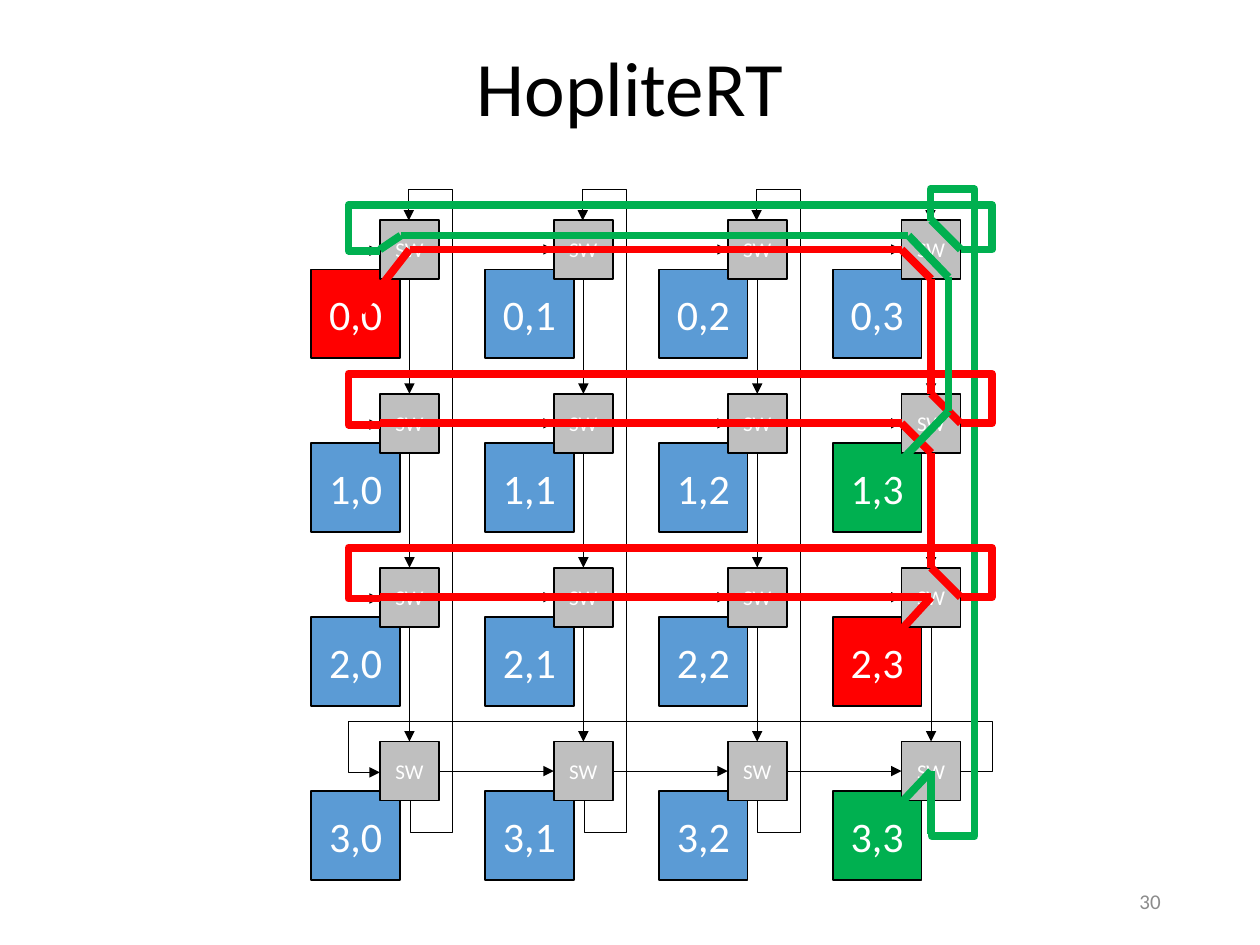
import itertools
import pptx
import pptx.util
import pptx.dml.color
import pptx.enum.shapes
import pptx.enum.text
import pptx.oxml
import pptx.oxml.ns
from lxml import etree

Inches = pptx.util.Inches
rgb = pptx.dml.color.RGBColor.from_string
qn = pptx.oxml.ns.qn
ALIGN = pptx.enum.text.PP_ALIGN
LINES = pptx.enum.shapes.MSO_CONNECTOR
BLACK, RED, GREEN, BLUE, GREY = "000000", "FF0000", "00B050", "5B9BD5", "BFBFBF"

# Grid: one unit is the pitch, point (0, 0) is the centre of the first switch
PITCH, LEFT, TOP, N = 1.38, 3.25, 1.98, 4
SWITCH, TILE = 0.34, 0.51
EDGE, LAST = SWITCH / 2, N - 1
LEAD = 0.18
THIN, THICK = 0.5, 4.5

deck = pptx.Presentation()
deck.slide_width, deck.slide_height = Inches(10), Inches(7.5)
slide = deck.slides.add_slide(deck.slide_layouts[6])


def write(text, left, top, width, height, size, colour="FFFFFF", fill=None,
          align=ALIGN.CENTER, spacing=1.0):
    """Place text, in a filled square if a fill is given; lengths in inches."""
    area = [Inches(v) for v in (left, top, width, height)]
    if fill:
        holder = slide.shapes.add_shape(pptx.enum.shapes.MSO_SHAPE.RECTANGLE, *area)
        holder.shadow.inherit = False
        holder.fill.solid()
        holder.fill.fore_color.rgb = rgb(fill)
        holder.line.color.rgb = rgb(BLACK)
        holder.line.width = pptx.util.Pt(1)
    else:
        holder = slide.shapes.add_textbox(*area)
    frame = holder.text_frame
    frame.word_wrap = True
    frame.vertical_anchor = pptx.enum.text.MSO_ANCHOR.MIDDLE
    line = frame.paragraphs[0]
    line.alignment, line.line_spacing = align, spacing
    run = line.add_run()
    run.text = text
    run.font.name, run.font.size = "Calibri", pptx.util.Pt(size)
    run.font.color.rgb = rgb(colour)
    return holder


def wire(begin, end, colour, weight, arrow=False, loop=None):
    """Join two grid points; loop = (lead out, lead in, detour) wraps around."""
    (x1, y1), (x2, y2) = [(LEFT + PITCH * x, TOP + PITCH * y) for x, y in (begin, end)]
    vertical = abs(y2 - y1) > abs(x2 - x1)
    if loop:
        length, drop = max(abs(x2 - x1), abs(y2 - y1)), 0.01
        middle, y1 = (x1 + x2) / 2, (y1 + y2) / 2
        x1, x2, y2 = middle + length / 2, middle - length / 2, y1 + drop
    link = slide.shapes.add_connector(LINES.ELBOW if loop else LINES.STRAIGHT,
                                      *[Inches(v) for v in (x1, y1, x2, y2)])
    link.line.color.rgb = rgb(colour)
    link.line.width = pptx.util.Pt(weight)
    outline = link.line._get_or_add_ln()
    if arrow:
        etree.SubElement(outline, qn("a:tailEnd"), type="triangle")
    properties = link._element.spPr
    etree.SubElement(properties, qn("a:effectLst"))
    if loop:
        if vertical:
            properties.find(qn("a:xfrm")).set("rot", "5400000")
        geometry = properties.find(qn("a:prstGeom"))
        geometry.set("prst", "bentConnector5")
        guides = geometry.find(qn("a:avLst"))
        lead_out, lead_in, detour = [PITCH * v for v in loop]
        shares = (-lead_out / length, -detour / drop, 1 + lead_in / length)
        for i, share in enumerate(shares, 1):
            etree.SubElement(guides, qn("a:gd"), name=f"adj{i}",
                             fmla=f"val {round(share * 100000)}")
    return link


# Title
write("HopliteRT", 0, 0, 10, 1.45, 44, BLACK, spacing=0.9)

# Tiles, then the switches above them
endpoints = {(0, 0): RED, (2, 3): RED, (1, 3): GREEN, (3, 3): GREEN}
cells = list(itertools.product(range(N), repeat=2))
for row, col in cells:
    write(f"{row},{col}", LEFT + PITCH * (col - 0.31 - TILE / 2),
          TOP + PITCH * (row + 0.37 - TILE / 2), PITCH * TILE, PITCH * TILE, 24,
          fill=endpoints.get((row, col), BLUE))
switches = {}
for row, col in cells:
    switches[row, col] = write("SW", LEFT + PITCH * (col - EDGE), TOP + PITCH * (row - EDGE),
                               PITCH * SWITCH, PITCH * SWITCH, 12, fill=GREY)

# Links to the next switch on the right and below
for row, col in cells:
    for (down, right), out_side, in_side in (((0, 1), 3, 1), ((1, 0), 2, 0)):
        neighbour = switches.get((row + down, col + right))
        if neighbour:
            link = wire((col, row), (col + right, row + down), BLACK, THIN, arrow=True)
            link.begin_connect(switches[row, col], out_side)
            link.end_connect(neighbour, in_side)

# Wrap-around links of each row and column
row_detours = [0.26, 0.29, 0.29, 0.29]
for i, detour in enumerate(row_detours):
    wire((LAST + EDGE, i), (-EDGE, i), BLACK, THIN, True, (LEAD, LEAD, detour))
    wire((i, LAST + EDGE), (i, -EDGE), BLACK, THIN, True, (LEAD, LEAD, 0.25))

# Packet routes: runs of grid points, each followed by a wrap-around or by None
row_wraps = [(LEAD, LEAD, detour) for detour in row_detours]
green_climb = [
    ([(2.67, 3.35), (3, 3), (3, 3.36)], (0.01, LEAD, 0.25)),
    ([(3, -EDGE), (3 + EDGE, 0)], row_wraps[0]),
    ([(-EDGE, 0)], None),
]
red_route = [
    ([(-0.28, 0.36), (0, 0), (3 - EDGE, 0), (3, EDGE), (3, 1 - EDGE), (3 + EDGE, 1)],
     row_wraps[1]),
    ([(-EDGE, 1), (3 - EDGE, 1), (3, 1 + EDGE), (3, 2 - EDGE), (3 + EDGE, 2)], row_wraps[2]),
    ([(-EDGE, 2), (3 - EDGE, 2), (3, 2), (2.67, 2.36)], None),
]
green_delivery = [
    ([(-EDGE, 0), (-0.05, -0.08), (2.87, -0.08), (3.1, 0.16), (3.1, 0.93), (2.67, 1.38)], None),
]
for colour, route in ((GREEN, green_climb), (RED, red_route), (GREEN, green_delivery)):
    for i, (points, wrap) in enumerate(route):
        for begin, end in itertools.pairwise(points):
            wire(begin, end, colour, THICK)
        if wrap:
            wire(points[-1], route[i + 1][0][0], colour, THICK, loop=wrap)

# Page number
write("30", 7.06, 6.95, 2.25, 0.4, 12, "8C8C8C", align=ALIGN.RIGHT)

deck.save("out.pptx")
